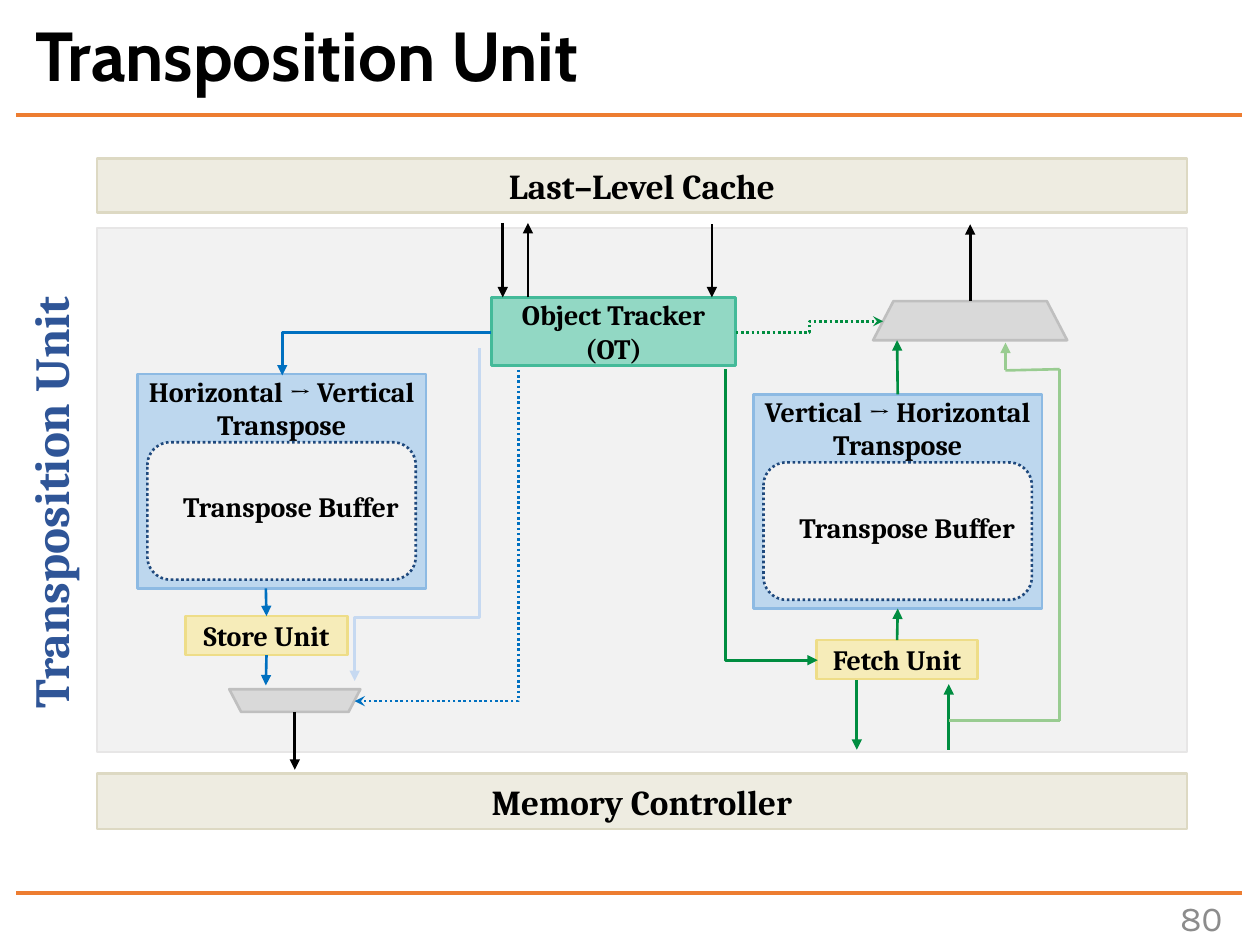
from lxml.etree import SubElement
from pptx import Presentation
from pptx.dml.color import RGBColor
from pptx.enum.dml import MSO_LINE as Dash
from pptx.enum.shapes import MSO_CONNECTOR as Link, MSO_SHAPE as Shape
from pptx.enum.text import MSO_ANCHOR as Anchor, MSO_AUTO_SIZE as Fit, PP_ALIGN as Align
from pptx.oxml.ns import qn
from pptx.util import Inches, Pt

BLACK, GREEN, LIGHT_GREEN = "000000", "008D40", "99CC91"
BLUE, PALE_BLUE, ORANGE = "0070C0", "C6D9F1", "ED7D31"
SAND, YELLOW = ("EEECE1", "DDD9C3"), ("F6ECB9", "EEDD88")
MINT, SKY = ("92D8C4", "44BA99"), ("BDD7EE", "8DBAE3")
GREY, PANEL, BUFFER = ("D9D9D9", "BFBFBF"), ("F2F2F2", "E7E6E6"), ("F2F2F2", "1F497D")

BLOCKS = [
    ("Last–Level Cache", (0.77, 1.26, 8.65, 0.43), SAND, 20),
    ("Memory Controller", (0.77, 6.14, 8.65, 0.44), SAND, 20),
    ("Object Tracker (OT)", (3.9, 2.36, 1.94, 0.54), MINT, 16),
    ("Fetch Unit", (6.48, 5.08, 1.28, 0.31), YELLOW, 16),
    ("Store Unit", (1.47, 4.89, 1.29, 0.31), YELLOW, 16),
]
TRANSPOSERS = [
    ("Vertical → Horizontal", 5.98, 3.13),
    ("Horizontal → Vertical", 1.09, 2.97),
]
SELECTORS = [((6.93, 2.39, 1.54, 0.31), 0), ((1.82, 5.47, 1.04, 0.18), 180)]

RULES = [(0.13, y, 9.86, y) for y in (0.91, 7.09)]
ARROWS = [
    ((4.19, 2.36, 4.19, 1.77), BLACK, None, None),
    ((3.99, 1.77, 3.99, 2.36), BLACK, None, None),
    ((5.65, 1.78, 5.65, 2.36), BLACK, None, None),
    ((7.7, 2.39, 7.7, 1.78), BLACK, None, None),
    ((2.34, 5.65, 2.34, 6.11), BLACK, None, None),
    ((7.12, 5.08, 7.12, 4.83), GREEN, ("Fetch Unit", 0), ("Vertical → Horizontal", 2)),
    ((7.12, 3.13, 7.12, 2.7), GREEN, ("Vertical → Horizontal", 0), None),
    ((7.53, 5.95, 7.53, 5.43), GREEN, None, None),
    ((6.8, 5.4, 6.8, 5.95), GREEN, None, None),
    ((2.11, 4.67, 2.11, 4.89), BLUE, None, ("Store Unit", 0)),
    ((2.11, 5.2, 2.11, 5.44), BLUE, ("Store Unit", 2), None),
]
BYPASS = [(7.53, 5.72), (8.41, 5.72), (8.41, 2.93), (7.98, 2.94), (7.98, 2.72)]
ELBOWS = [
    ((4.97, 3.72, 2.31, 0.73), 270, "flipH", 2, None, GREEN, False),
    ((5.84, 2.55, 1.17, 0.09), 0, "flipV", 3, 0.5, GREEN, True),
    ((2.24, 2.64, 1.66, 0.34), 180, "flipV", 2, None, BLUE, False),
    ((1.99, 3.59, 2.64, 0.99), 90, None, 3, 0.81, PALE_BLUE, False),
    ((2.15, 3.6, 2.63, 1.3), 90, None, 2, None, BLUE, True),
]


def colour(value):
    return RGBColor.from_string(value)


def inches(values):
    return [Inches(value) for value in values]


def write(shape, lines, size, font="Cambria", ink=BLACK, align=Align.CENTER, bold=True, anchor=Anchor.MIDDLE):
    frame = shape.text_frame
    frame.word_wrap = True
    frame.vertical_anchor = anchor
    frame.text = "\n".join(lines)
    for para in frame.paragraphs:
        para.alignment = align
        para.font.name, para.font.size, para.font.bold = font, Pt(size), bold
        para.font.color.rgb = colour(ink)
    return frame


def add_text(page, place, *args, **style):
    box = page.shapes.add_textbox(*inches(place))
    write(box, *args, **style)
    return box


def add_block(page, kind, place, colours, width=1.5):
    block = page.shapes.add_shape(kind, *inches(place))
    block.shadow.inherit = False
    block.fill.solid()
    block.fill.fore_color.rgb = colour(colours[0])
    block.line.color.rgb = colour(colours[1])
    block.line.width = Pt(width)
    return block


def add_line(page, ends, ink, head=None, width=1.5, kind=Link.STRAIGHT, dotted=False):
    line = page.shapes.add_connector(kind, *inches(ends))
    line.line.color.rgb = colour(ink)
    line.line.width = Pt(width)
    if dotted:
        line.line.dash_style = Dash.ROUND_DOT
    if head:
        SubElement(line.line._get_or_add_ln(), qn("a:tailEnd"), type=head)
    SubElement(line._element.spPr, qn("a:effectLst"))
    return line


def add_elbow(page, place, turn, flip, bends, middle, ink, dotted):
    left, top, width, height = place
    ends = (left, top, left + width, top + height)
    line = add_line(page, ends, ink, "stealth" if dotted else "triangle", kind=Link.ELBOW, dotted=dotted)
    frame = line._element.spPr.find(qn("a:xfrm"))
    frame.set("rot", str(turn * 60000))
    if flip:
        frame.set(flip, "1")
    preset = line._element.spPr.find(qn("a:prstGeom"))
    preset.set("prst", f"bentConnector{bends}")
    if middle:
        SubElement(preset.find(qn("a:avLst")), qn("a:gd"), name="adj1", fmla=f"val {round(middle * 100000)}")


def add_transposer(page, label, left, top):
    unit = add_block(page, Shape.RECTANGLE, (left, top, 2.29, 1.7), SKY)
    frame = write(unit, [label, "Transpose"], 16, anchor=Anchor.TOP)
    frame.margin_left = frame.margin_right = frame.margin_top = 0
    buffer = add_block(page, Shape.ROUNDED_RECTANGLE, (left + 0.08, top + 0.54, 2.13, 1.09), BUFFER)
    buffer.line.dash_style = Dash.ROUND_DOT
    add_text(page, (left + 0.17, top + 0.87, 2.1, 0.37), ["Transpose Buffer"], 16, anchor=Anchor.TOP)
    return unit


def main():
    deck = Presentation()
    deck.slide_width, deck.slide_height = Inches(10), Inches(7.5)
    page = deck.slides.add_slide(deck.slide_layouts[5])

    title = page.shapes.title
    title.left, title.top, title.width, title.height = inches((0.18, 0.14, 9.73, 0.66))
    frame = write(title, ["Transposition Unit"], 39.6, "Cabin", align=Align.LEFT)
    frame.auto_size = Fit.NONE
    frame.paragraphs[0].line_spacing = 0.9

    for ends in RULES:
        add_line(page, ends, ORANGE, width=2.25)
    add_text(page, (8.72, 7.08, 1.08, 0.4), ["80"], 20, "Karla", "8C8C8C", Align.RIGHT, False)
    add_block(page, Shape.RECTANGLE, (0.77, 1.81, 8.65, 4.16), PANEL, 1)
    side = add_text(page, (-1.88, 3.7, 4.55, 0.57), ["Transposition Unit"], 28, ink="2F5597", anchor=Anchor.TOP)
    side.rotation = 270

    units = {}
    for label, place, colours, size in BLOCKS:
        units[label] = add_block(page, Shape.RECTANGLE, place, colours)
        write(units[label], [label], size)
    for label, left, top in TRANSPOSERS:
        units[label] = add_transposer(page, label, left, top)
    for place, turn in SELECTORS:
        selector = add_block(page, Shape.TRAPEZOID, place, GREY)
        selector.adjustments[0] = 0.52
        selector.rotation = turn

    for ends, ink, start, finish in ARROWS:
        arrow = add_line(page, ends, ink, "triangle")
        if start:
            arrow.begin_connect(units[start[0]], start[1])
        if finish:
            arrow.end_connect(units[finish[0]], finish[1])
    for start, finish in zip(BYPASS, BYPASS[1:]):
        add_line(page, start + finish, LIGHT_GREEN, "triangle" if finish == BYPASS[-1] else None)
    for elbow in ELBOWS:
        add_elbow(page, *elbow)

    deck.save("out.pptx")


if __name__ == "__main__":
    main()
